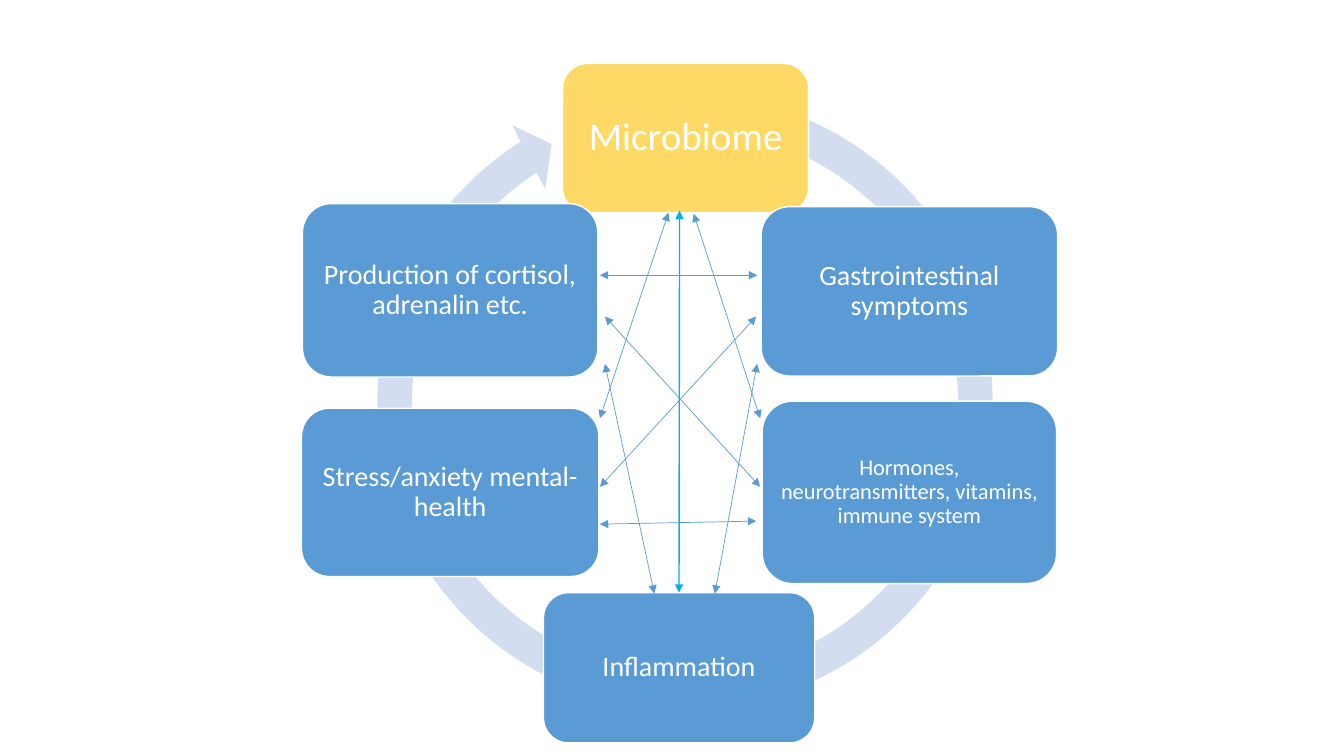
from lxml import etree
from pptx import Presentation
from pptx.dml.color import RGBColor
from pptx.enum.shapes import MSO_CONNECTOR, MSO_SHAPE
from pptx.enum.text import MSO_ANCHOR, PP_ALIGN
from pptx.oxml.ns import qn
from pptx.util import Inches, Pt

ROUNDED = MSO_SHAPE.ROUNDED_RECTANGLE
CIRCULAR_ARROW = MSO_SHAPE.CIRCULAR_ARROW
STRAIGHT = MSO_CONNECTOR.STRAIGHT
MIDDLE = MSO_ANCHOR.MIDDLE
CENTER = PP_ALIGN.CENTER
TOP_SIDE = 0

COLORS = {"blue": "5B9BD5", "yellow": "FFD966", "ring": "D2DEEF",
          "cyan": "00B0F0", "white": "FFFFFF"}
FONT = "Calibri"

# Ring: left, top, width, height and the arrow's adjustments
RING = (3.56, 0.75, 6.47, 6.47)
RING_ADJUSTMENTS = (0.053, 3.126, 142.447, 171.173, 0.055)

# Factors: text, (left, top, width, height), fill, font size, inset
FACTORS = [
    ("Microbiome", (5.58, 0.63, 2.44, 1.48), "yellow", 28, 0.12),
    ("Gastrointestinal symptoms", (7.55, 2.05, 2.94, 1.68), "blue", 20, 0.08),
    ("Hormones, neurotransmitters, vitamins, immune system",
     (7.56, 3.98, 2.92, 1.81), "blue", 16, 0.07),
    ("Inflammation", (5.39, 5.88, 2.69, 1.49), "blue", 20, 0.08),
    ("Stress/anxiety mental-health", (2.99, 4.05, 2.95, 1.67), "blue", 20, 0.08),
    ("Production of cortisol, adrenalin etc.", (3, 2.02, 2.93, 1.72), "blue", 20, 0.08),
]

# Two-way links: start, end
MAIN_LINK = ((6.74, 2.09), (6.74, 5.88))
LINKS = [
    ((5.95, 4.83), (7.5, 3.14)),
    ((6, 3.61), (6.49, 5.89)),
    ((5.95, 5.2), (7.5, 5.17)),
    ((7.51, 3.61), (7.09, 5.89)),
    ((5.95, 2.73), (7.51, 2.73)),
    ((6, 3.14), (7.54, 4.83)),
    ((6.88, 2.12), (7.54, 4.15)),
    ((5.95, 4.15), (6.63, 2.11)),
]


def rgb(name):
    return RGBColor.from_string(COLORS[name])


def add_filled(page, kind, place, fill):
    shape = page.shapes.add_shape(kind, *map(Inches, place))
    shape.shadow.inherit = False
    shape.fill.solid()
    shape.fill.fore_color.rgb = rgb(fill)
    return shape


def add_factor(page, text, place, fill, size, inset):
    box = add_filled(page, ROUNDED, place, fill)
    box.line.color.rgb = rgb("white")
    box.line.width = Pt(1)
    frame = box.text_frame
    frame.text = text
    frame.word_wrap = True
    frame.vertical_anchor = MIDDLE
    frame.margin_left = frame.margin_right = Inches(inset)
    frame.margin_top = frame.margin_bottom = Inches(inset)
    para = frame.paragraphs[0]
    para.alignment = CENTER
    para.line_spacing = 0.9
    para.font.name = FONT
    para.font.size = Pt(size)
    para.font.color.rgb = rgb("white")
    return box


def add_link(page, start, end, color="blue", width=0.5):
    link = page.shapes.add_connector(STRAIGHT, *map(Inches, start + end))
    link.line.color.rgb = rgb(color)
    link.line.width = Pt(width)
    outline = link.line._get_or_add_ln()
    for tag in ("a:headEnd", "a:tailEnd"):
        etree.SubElement(outline, qn(tag), type="triangle")
    etree.SubElement(link._element.spPr, qn("a:effectLst"))
    return link


def main():
    deck = Presentation()
    deck.slide_width, deck.slide_height = Inches(13.33), Inches(7.5)
    page = deck.slides.add_slide(deck.slide_layouts[6])

    # Ring behind the factors
    ring = add_filled(page, CIRCULAR_ARROW, RING, "ring")
    ring.line.fill.background()
    for index, value in enumerate(RING_ADJUSTMENTS):
        ring.adjustments[index] = value

    # Factors around the ring
    boxes = {factor[0]: add_factor(page, *factor) for factor in FACTORS}

    # Links between the factors
    main_link = add_link(page, *MAIN_LINK, color="cyan", width=1)
    main_link.end_connect(boxes["Inflammation"], TOP_SIDE)
    for start, end in LINKS:
        add_link(page, start, end)

    deck.save("out.pptx")


if __name__ == "__main__":
    main()
